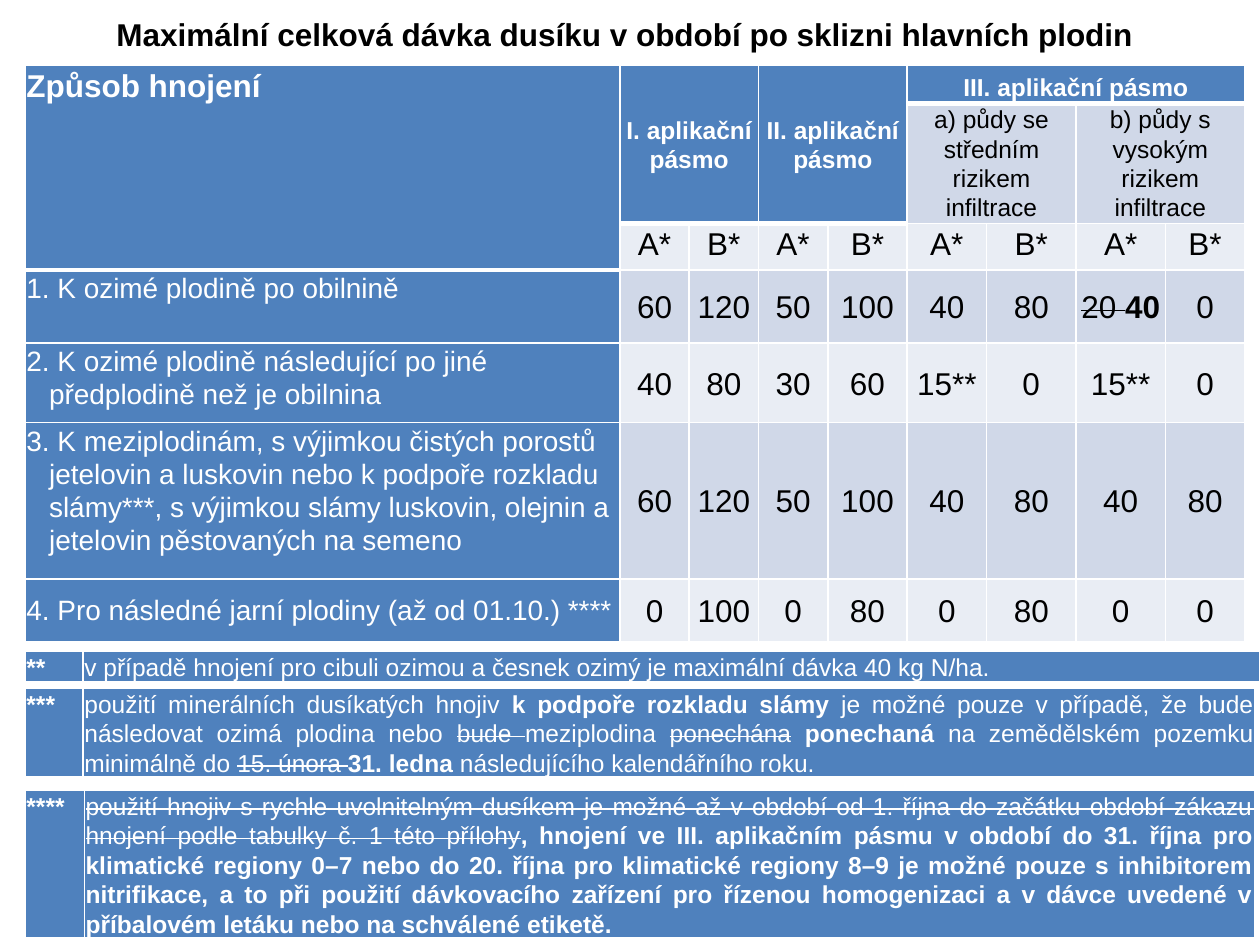
from dataclasses import dataclass

from lxml.etree import SubElement
from pptx import Presentation
from pptx.dml.color import RGBColor
from pptx.enum.text import MSO_ANCHOR as Anchor, PP_ALIGN as Align
from pptx.oxml.ns import qn
from pptx.util import Inches, Pt


@dataclass(frozen=True)
class Theme:
    """Colours, type sizes and spacing of the slide."""
    font: str = "Arial"
    blue: str = "4F81BD"
    dark_band: str = "D0D8E8"
    light_band: str = "E9EDF4"
    white: str = "FFFFFF"
    black: str = "000000"
    large: int = 18
    medium: int = 16
    small: int = 14
    line_spacing: float = 1.07
    inset: float = 0.01
    hanging: float = 0.18


THEME = Theme()
TITLE = "Maximální celková dávka dusíku v období po sklizni hlavních plodin"
COLUMNS = [4.72, 0.55, 0.55, 0.55, 0.63, 0.63, 0.71, 0.71, 0.63]
ROWS = [0.3, 0.87, 0.37, 0.58, 0.63, 1.24, 0.5]
ZONES = [
    (0, 1, 1, 2, "I. aplikační pásmo", Anchor.MIDDLE),
    (0, 3, 1, 4, "II. aplikační pásmo", Anchor.MIDDLE),
    (0, 5, 0, 8, "III. aplikační pásmo", Anchor.BOTTOM),
]
SOILS = [
    (5, "a) půdy se středním rizikem infiltrace"),
    (7, "b) půdy s vysokým rizikem infiltrace"),
]
DOSES = [
    ("1. K ozimé plodině po obilnině",
     ["60", "120", "50", "100", "40", "80", [("20 ", "strike"), ("40", "bold")], "0"]),
    ("2. K ozimé plodině následující po jiné předplodině než je obilnina",
     ["40", "80", "30", "60", "15**", "0", "15**", "0"]),
    ("3. K meziplodinám, s výjimkou čistých porostů jetelovin a luskovin nebo "
     "k podpoře rozkladu slámy***, s výjimkou slámy luskovin, olejnin "
     "a jetelovin pěstovaných na semeno",
     ["60", "120", "50", "100", "40", "80", "40", "80"]),
    ("4. Pro následné jarní plodiny (až od 01.10.) ****",
     ["0", "100", "0", "80", "0", "80", "0", "0"]),
]
NOTES = [
    ((0.2, 5.17, 9.8, 0.16), 0.46, "**",
     "v případě hnojení pro cibuli ozimou a česnek ozimý je maximální dávka 40 kg N/ha."),
    ((0.2, 5.46, 9.76, 0.7), 0.46, "***", [
        ("použití minerálních dusíkatých hnojiv ", ""),
        ("k podpoře rozkladu slámy ", "bold"),
        ("je možné pouze v případě, že bude následovat ozimá plodina nebo ", ""),
        ("bude ", "strike"),
        ("meziplodina ", ""),
        ("ponechána", "strike"),
        (" ", ""),
        ("ponechaná ", "bold"),
        ("na zemědělském pozemku minimálně do ", ""),
        ("15. února ", "strike"),
        ("31. ledna ", "bold"),
        ("následujícího kalendářního roku.", ""),
    ]),
    ((0.2, 6.27, 9.76, 1.04), 0.47, "****", [
        ("použití hnojiv s rychle uvolnitelným dusíkem je možné až v období od "
         "1. října do začátku období zákazu hnojení podle tabulky č. 1 této přílohy", "strike"),
        (", hnojení ve III. aplikačním pásmu v období do 31. října pro klimatické "
         "regiony 0–7 nebo do 20. října pro klimatické regiony 8–9 je možné pouze "
         "s inhibitorem nitrifikace, a to při použití dávkovacího zařízení pro řízenou "
         "homogenizaci a v dávce uvedené v příbalovém letáku nebo na schválené etiketě.", "bold"),
    ]),
]


def write(paragraph, content, size, color, bold=False, align=Align.LEFT):
    """Fill a paragraph with plain text or with (text, style) runs."""
    paragraph.alignment = align
    font = paragraph.font
    font.name, font.size, font.bold = THEME.font, Pt(size), bold
    font.color.rgb = RGBColor.from_string(color)
    runs = [(content, "")] if isinstance(content, str) else content
    for text, style in runs:
        run = paragraph.add_run()
        run.text = text
        if style == "bold":
            run.font.bold = True
        elif style == "strike":
            run.font._element.set("strike", "sngStrike")


def style_cell(cell, fill, bottom=1):
    """Give a cell its fill, thin insets and white borders."""
    cell.margin_left = cell.margin_right = Inches(THEME.inset)
    cell.margin_top = cell.margin_bottom = Inches(THEME.inset)
    properties = cell._tc.get_or_add_tcPr()
    for side, width in (("L", 1), ("R", 1), ("T", 1), ("B", bottom)):
        line = SubElement(properties, qn(f"a:ln{side}"), w=str(Pt(width)))
        solid = SubElement(line, qn("a:solidFill"))
        SubElement(solid, qn("a:srgbClr"), val=THEME.white)
    cell.fill.solid()
    cell.fill.fore_color.rgb = RGBColor.from_string(fill)


def fill_cell(cell, content, size, color, bold=False, align=Align.CENTER, anchor=Anchor.TOP):
    """Write the only paragraph of a cell and return it."""
    cell.vertical_anchor = anchor
    paragraph = cell.text_frame.paragraphs[0]
    paragraph.line_spacing = THEME.line_spacing
    write(paragraph, content, size, color, bold, align)
    return paragraph


def add_grid(slide, box, columns, rows):
    """Add an unbanded table with the given column widths and row heights."""
    frame = slide.shapes.add_table(len(rows), len(columns), *map(Inches, box))
    table = frame.table
    table.first_row = table.horz_banding = False
    for column, width in zip(table.columns, columns):
        column.width = Inches(width)
    for row, height in zip(table.rows, rows):
        row.height = Inches(height)
    return table


def add_title(slide, box):
    """Place the centred slide title."""
    frame = slide.shapes.add_textbox(*map(Inches, box)).text_frame
    frame.word_wrap = True
    frame.vertical_anchor = Anchor.MIDDLE
    write(frame.paragraphs[0], TITLE, THEME.large, THEME.black, True, Align.CENTER)


def fill_dose_header(table):
    """Merge and label the three header rows of the dose table."""
    table.cell(0, 0).merge(table.cell(2, 0))
    fill_cell(table.cell(0, 0), "Způsob hnojení", THEME.large, THEME.white, True, Align.LEFT)
    for top, left, bottom, right, label, anchor in ZONES:
        table.cell(top, left).merge(table.cell(bottom, right))
        fill_cell(table.cell(top, left), label, THEME.small, THEME.white, True, anchor=anchor)
    for left, label in SOILS:
        table.cell(1, left).merge(table.cell(1, left + 1))
        fill_cell(table.cell(1, left), label, THEME.small, THEME.black)
    for column in range(1, len(COLUMNS)):
        label = "A*" if column % 2 else "B*"
        fill_cell(table.cell(2, column), label, THEME.large, THEME.black)


def add_dose_table(slide, box):
    """Place the table of nitrogen doses by zone."""
    table = add_grid(slide, box, COLUMNS, ROWS)
    for row in range(len(ROWS)):
        band = THEME.dark_band if row % 2 else THEME.light_band
        for column in range(len(COLUMNS)):
            blue = column == 0 or row == 0 or (row == 1 and column < 5)
            style_cell(table.cell(row, column), THEME.blue if blue else band,
                       3 if blue and row < 3 else 1)
    fill_dose_header(table)
    for row, (label, values) in enumerate(DOSES, 3):
        anchor = Anchor.MIDDLE if row == len(ROWS) - 1 else Anchor.TOP
        paragraph = fill_cell(table.cell(row, 0), label, THEME.medium, THEME.white,
                              align=Align.LEFT, anchor=anchor)
        if row in (4, 5):
            properties = paragraph._p.get_or_add_pPr()
            properties.set("marL", str(Inches(THEME.hanging)))
            properties.set("indent", str(-Inches(THEME.hanging)))
        for column, value in enumerate(values, 1):
            fill_cell(table.cell(row, column), value, THEME.large, THEME.black,
                      anchor=Anchor.MIDDLE)


def add_note(slide, box, mark_width, mark, content):
    """Place one footnote as a mark beside its text."""
    table = add_grid(slide, box, [mark_width, box[2] - mark_width], [box[3]])
    for cell in table.iter_cells():
        style_cell(cell, THEME.blue, 3)
    fill_cell(table.cell(0, 0), mark, THEME.small, THEME.white, True, Align.JUSTIFY)
    fill_cell(table.cell(0, 1), content, THEME.small, THEME.white,
              align=Align.JUSTIFY, anchor=Anchor.MIDDLE)


def main():
    """Build the slide and save it."""
    presentation = Presentation()
    presentation.slide_width, presentation.slide_height = Inches(10), Inches(7.5)
    slide = presentation.slides.add_slide(presentation.slide_layouts[6])
    add_dose_table(slide, (0.2, 0.52, sum(COLUMNS), sum(ROWS)))
    for note in NOTES:
        add_note(slide, *note)
    add_title(slide, (0.12, 0.07, 9.68, 0.4))
    presentation.save("out.pptx")


if __name__ == "__main__":
    main()
